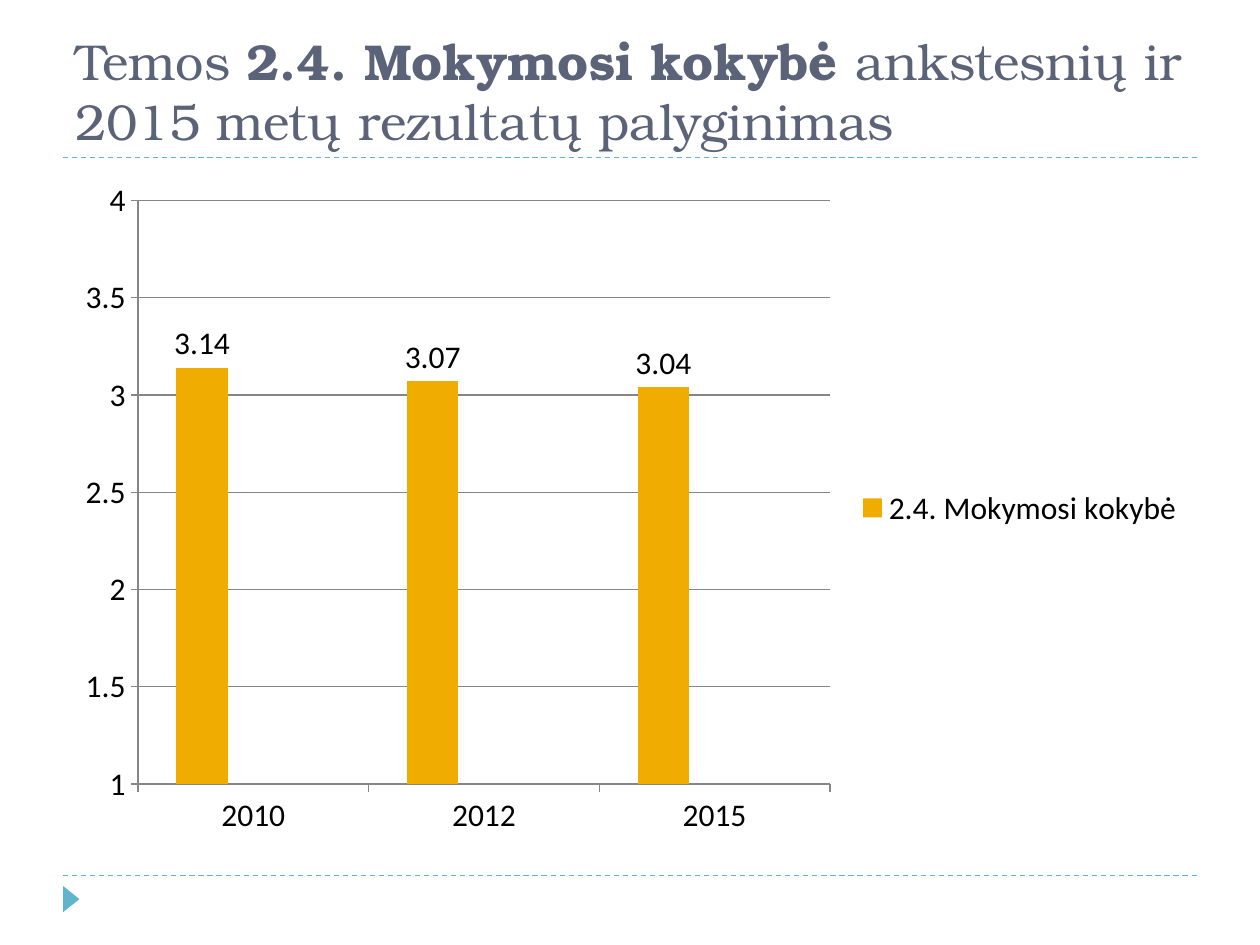
from dataclasses import dataclass

from lxml import etree
from pptx import Presentation
from pptx import util as u
from pptx.chart.data import CategoryChartData
from pptx.dml.color import RGBColor
from pptx.enum import chart as charts, dml, shapes, text
from pptx.oxml import ns


@dataclass(frozen=True)
class Theme:
    title_font: str = "TeX Gyre Bonum"
    chart_font: str = "Calibri"
    title_size: float = 28.8
    chart_size: float = 18
    line_width: float = 0.75
    title: str = "5A6378"
    accent: str = "60B5CC"
    chart_text: str = "000000"
    axis: str = "868686"
    series: tuple = ("F0AD00", "60B5CC", "E66C7D")


THEME = Theme()
LEFT, WIDTH = u.Cm(1.27), u.Cm(22.86)


def rgb(value):
    return RGBColor.from_string(value)


def style_line(line, color, dash=None):
    line.color.rgb = rgb(color)
    line.width = u.Pt(THEME.line_width)
    if dash is not None:
        line.dash_style = dash


def style_font(font, name, size, color, bold=False):
    font.name = name
    font.size = u.Pt(size)
    font.bold = bold
    font.color.rgb = rgb(color)


def add_rule(page, y):
    rule = page.shapes.add_connector(
        shapes.MSO_CONNECTOR.STRAIGHT, LEFT, y, LEFT + WIDTH, y)
    style_line(rule.line, THEME.accent, dml.MSO_LINE.DASH)
    etree.SubElement(rule.element.spPr, ns.qn("a:effectLst"))


def add_marker(page):
    marker = page.shapes.add_shape(
        shapes.MSO_SHAPE.ISOSCELES_TRIANGLE,
        u.Cm(1.17), u.Cm(17.96), u.Cm(0.53), u.Cm(0.33))
    marker.rotation = 90
    marker.shadow.inherit = False
    marker.fill.solid()
    marker.fill.fore_color.rgb = rgb(THEME.accent)
    marker.line.fill.background()


def add_span(para, content, **style):
    span = para.add_run()
    span.text = content
    style_font(span.font, THEME.title_font, THEME.title_size, THEME.title, **style)


def add_title(page):
    box = page.shapes.add_textbox(LEFT, u.Cm(0.43), WIDTH, u.Cm(2.74))
    frame = box.text_frame
    frame.word_wrap = True
    frame.vertical_anchor = text.MSO_ANCHOR.BOTTOM
    para = frame.paragraphs[0]
    add_span(para, "Temos ")
    add_span(para, "2.4. Mokymosi kokybė ", bold=True)
    add_span(para, "ankstesnių ir 2015 metų rezultatų palyginimas")


def style_axes(chart):
    for axis in (chart.category_axis, chart.value_axis):
        axis.major_tick_mark = charts.XL_TICK_MARK.OUTSIDE
        axis.minor_tick_mark = charts.XL_TICK_MARK.NONE
        style_line(axis.format.line, THEME.axis)
    scale = chart.value_axis
    scale.minimum_scale, scale.maximum_scale, scale.major_unit = 1, 4, 0.5
    scale.has_major_gridlines = True
    style_line(scale.major_gridlines.format.line, THEME.axis)


def add_legend(chart, hidden):
    chart.has_legend = True
    legend = chart.legend
    legend.position = charts.XL_LEGEND_POSITION.RIGHT
    legend.include_in_layout = False
    position = legend._element.find(ns.qn("c:legendPos"))
    for index in reversed(hidden):
        entry = etree.Element(ns.qn("c:legendEntry"))
        etree.SubElement(entry, ns.qn("c:idx")).set("val", str(index))
        etree.SubElement(entry, ns.qn("c:delete")).set("val", "1")
        position.addnext(entry)


def add_results_chart(page):
    results = CategoryChartData()
    results.categories = ["2010", "2012", "2015"]
    results.add_series("2.4. Mokymosi kokybė", (3.14, 3.07, 3.04))
    for name in ("Series 2", "Series 3"):
        results.add_series(name, (None, None, None))
    chart = page.shapes.add_chart(
        charts.XL_CHART_TYPE.COLUMN_CLUSTERED,
        LEFT, u.Cm(3.38), WIDTH, u.Cm(13.72), results).chart
    chart.has_title = False
    style_font(chart.font, THEME.chart_font, THEME.chart_size, THEME.chart_text)
    plot = chart.plots[0]
    plot.vary_by_categories = False
    plot.gap_width, plot.overlap = 150, 0
    for series, color in zip(plot.series, THEME.series):
        series.format.fill.solid()
        series.format.fill.fore_color.rgb = rgb(color)
    labels = plot.series[0].data_labels
    labels.show_value = True
    labels.position = charts.XL_LABEL_POSITION.OUTSIDE_END
    style_axes(chart)
    add_legend(chart, hidden=(1, 2))


def main():
    deck = Presentation()
    deck.slide_width, deck.slide_height = u.Cm(25.4), u.Cm(19.05)
    page = deck.slides.add_slide(deck.slide_layouts[6])
    for y in (17.65, 3.17):
        add_rule(page, u.Cm(y))
    add_marker(page)
    add_title(page)
    add_results_chart(page)
    deck.save("out.pptx")


if __name__ == "__main__":
    main()
